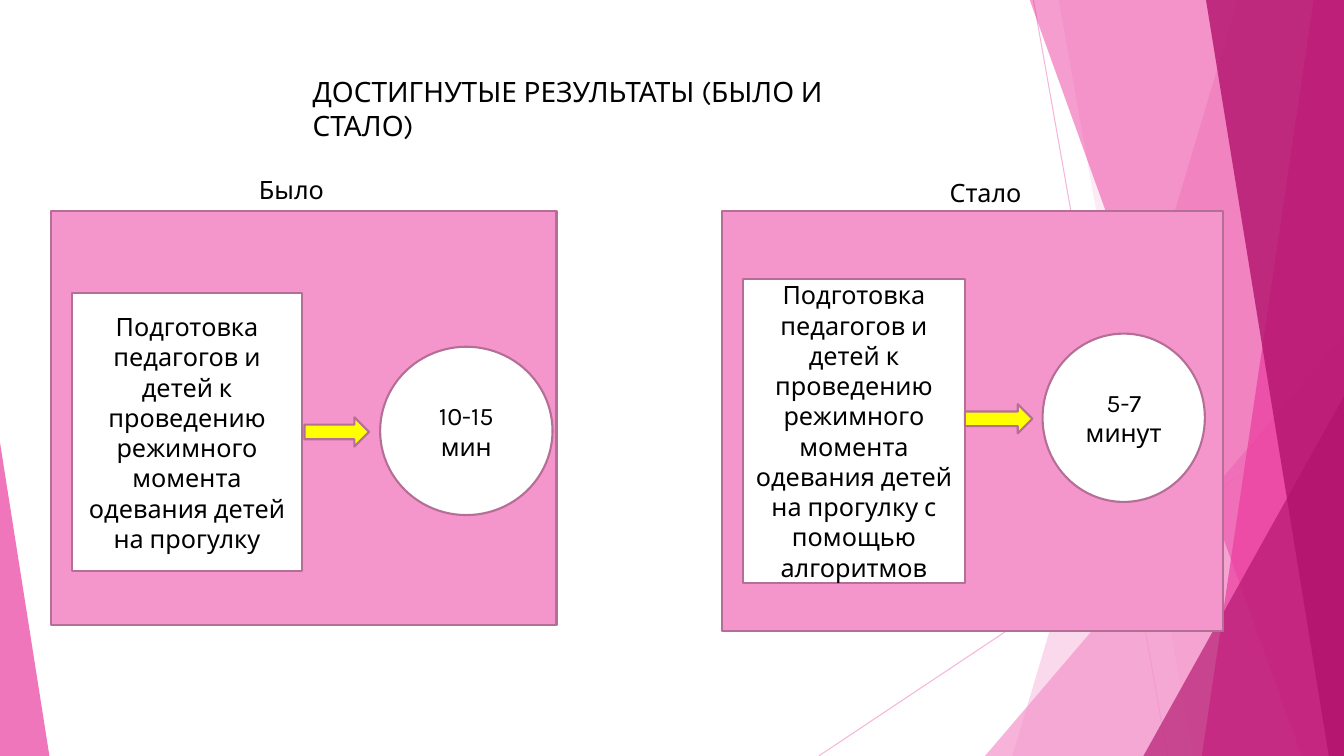
from lxml import etree
from pptx import Presentation
from pptx.dml.color import RGBColor
from pptx.enum.shapes import MSO_CONNECTOR, MSO_SHAPE
from pptx.enum.text import MSO_ANCHOR, MSO_AUTO_SIZE, PP_ALIGN
from pptx.oxml.ns import qn
from pptx.util import Inches, Pt

RECTANGLE, OVAL = MSO_SHAPE.RECTANGLE, MSO_SHAPE.OVAL
ARROW, TRIANGLE = MSO_SHAPE.RIGHT_ARROW, MSO_SHAPE.ISOSCELES_TRIANGLE
STRAIGHT = MSO_CONNECTOR.STRAIGHT
LEFT, CENTER = PP_ALIGN.LEFT, PP_ALIGN.CENTER
TOP, MIDDLE = MSO_ANCHOR.TOP, MSO_ANCHOR.MIDDLE
NO_AUTOFIT = MSO_AUTO_SIZE.NONE

COLORS = {"pink": "F496CB", "magenta": "EB3D9F", "berry": "B2136D", "outline": "B56F96",
          "white": "FFFFFF", "yellow": "FFFF00", "black": "000000"}
FONT = "Karla"
WIDTH, HEIGHT = 13.33, 7.5
TASK = "Подготовка педагогов и детей к проведению режимного момента одевания детей на прогулку"

RAYS = [((10.25, 0), (11.58, HEIGHT)), ((WIDTH, 4.03), (8.12, HEIGHT))]
BACK_BANDS = [(12.28, 10.04, "pink", 36), (10.5, 11.83, "pink", 20)]
FRONT_BANDS = [(10.21, 12.91, "magenta", 50), (13.03, 11.92, "magenta", 70),
               (11.96, 13.18, "berry", 80)]
STAGES = [
    {"label": ("Было", (2.47, 1.68, 0.87, 0.4)), "panel": (0.51, 2.09, 5.01, 4.11),
     "task": (TASK, (0.71, 2.91, 2.29, 2.76)), "time": ("10-15 мин", (3.77, 3.44, 1.71, 1.67)),
     "arrow": (3.02, 4.14, 0.64, 0.29)},
    {"label": ("Стало", (9.32, 1.71, 0.95, 0.4)), "panel": (7.16, 2.09, 4.97, 4.17),
     "task": (TASK + " с помощью алгоритмов", (7.37, 2.77, 2.2, 3.01)),
     "time": ("5-7 минут", (10.34, 3.31, 1.61, 1.67)), "arrow": (9.57, 4.01, 0.67, 0.29)},
]


class SlideBuilder:
    """Draws styled elements on the current slide."""

    def __init__(self, slide):
        self.shapes = slide.shapes

    def fill(self, target, name, opacity=100):
        target.solid()
        target.fore_color.rgb = RGBColor.from_string(COLORS[name])
        if opacity < 100:
            node = target.fore_color._xFill.find(qn("a:srgbClr"))
            etree.SubElement(node, qn("a:alpha"), val=str(opacity * 1000))

    def paint(self, shape, color, opacity=100, outlined=False):
        shape.shadow.inherit = False
        self.fill(shape.fill, color, opacity)
        if outlined:
            self.fill(shape.line.fill, "outline")
            shape.line.width = Pt(1.5)
        else:
            shape.line.fill.background()

    def set_text(self, shape, text, size=18, align=CENTER, anchor=MIDDLE, wrap=True):
        frame = shape.text_frame
        frame.text = text
        frame.word_wrap = wrap
        frame.auto_size = NO_AUTOFIT
        frame.vertical_anchor = anchor
        para = frame.paragraphs[0]
        para.alignment = align
        span = para.runs[0]
        span.font.name = FONT
        span.font.size = Pt(size)
        self.fill(span.font.fill, "black")

    def title(self, text, area):
        title = self.shapes.title
        title.left, title.top, title.width, title.height = map(Inches, area)
        self.set_text(title, text, size=20, align=LEFT, anchor=TOP)

    def label(self, text, area):
        box = self.shapes.add_textbox(*map(Inches, area))
        self.set_text(box, text, align=LEFT, anchor=TOP, wrap=False)

    def block(self, kind, area, color, text=None):
        block = self.shapes.add_shape(kind, *map(Inches, area))
        self.paint(block, color, outlined=True)
        if text:
            self.set_text(block, text)

    def triangle(self, area, apex, color, opacity):
        triangle = self.shapes.add_shape(TRIANGLE, *map(Inches, area))
        triangle.adjustments[0] = apex
        self.paint(triangle, color, opacity)

    def band(self, top_x, bottom_x, color, opacity):
        corners = [(top_x, -0.01), (WIDTH, -0.01), (WIDTH, HEIGHT), (bottom_x, HEIGHT)]
        points = [(Inches(x), Inches(y)) for x, y in corners]
        outline = self.shapes.build_freeform(*points[0])
        outline.add_line_segments(points[1:], close=True)
        self.paint(outline.convert_to_shape(), color, opacity)

    def ray(self, start, end):
        ray = self.shapes.add_connector(STRAIGHT, *map(Inches, start + end))
        ray.line.width = Pt(0.75)
        self.fill(ray.line.fill, "pink", 70)
        etree.SubElement(ray._element.spPr, qn("a:effectLst"))

    def backdrop(self):
        for ray in RAYS:
            self.ray(*ray)
        for band in BACK_BANDS:
            self.band(*band)
        self.triangle((9.77, 3.33, 3.56, 4.17), 1, "pink", 72)
        for band in FRONT_BANDS:
            self.band(*band)
        self.triangle((11.34, 3.93, 1.99, 3.57), 1, "berry", 66)
        self.triangle((0, 4.39, 0.49, 3.11), 0, "magenta", 70)

    def stage(self, stage):
        task, task_area = stage["task"]
        time, time_area = stage["time"]
        self.block(RECTANGLE, stage["panel"], "pink")
        self.block(RECTANGLE, task_area, "white", task)
        self.block(OVAL, time_area, "white", time)
        self.block(ARROW, stage["arrow"], "yellow")
        self.label(*stage["label"])


def main():
    deck = Presentation()
    deck.slide_width, deck.slide_height = Inches(WIDTH), Inches(HEIGHT)
    page = SlideBuilder(deck.slides.add_slide(deck.slide_layouts[5]))
    page.backdrop()
    page.title("ДОСТИГНУТЫЕ РЕЗУЛЬТАТЫ (БЫЛО И СТАЛО)", (3, 0.69, 6.22, 0.44))
    for stage in STAGES:
        page.stage(stage)
    deck.save("out.pptx")


if __name__ == "__main__":
    main()
